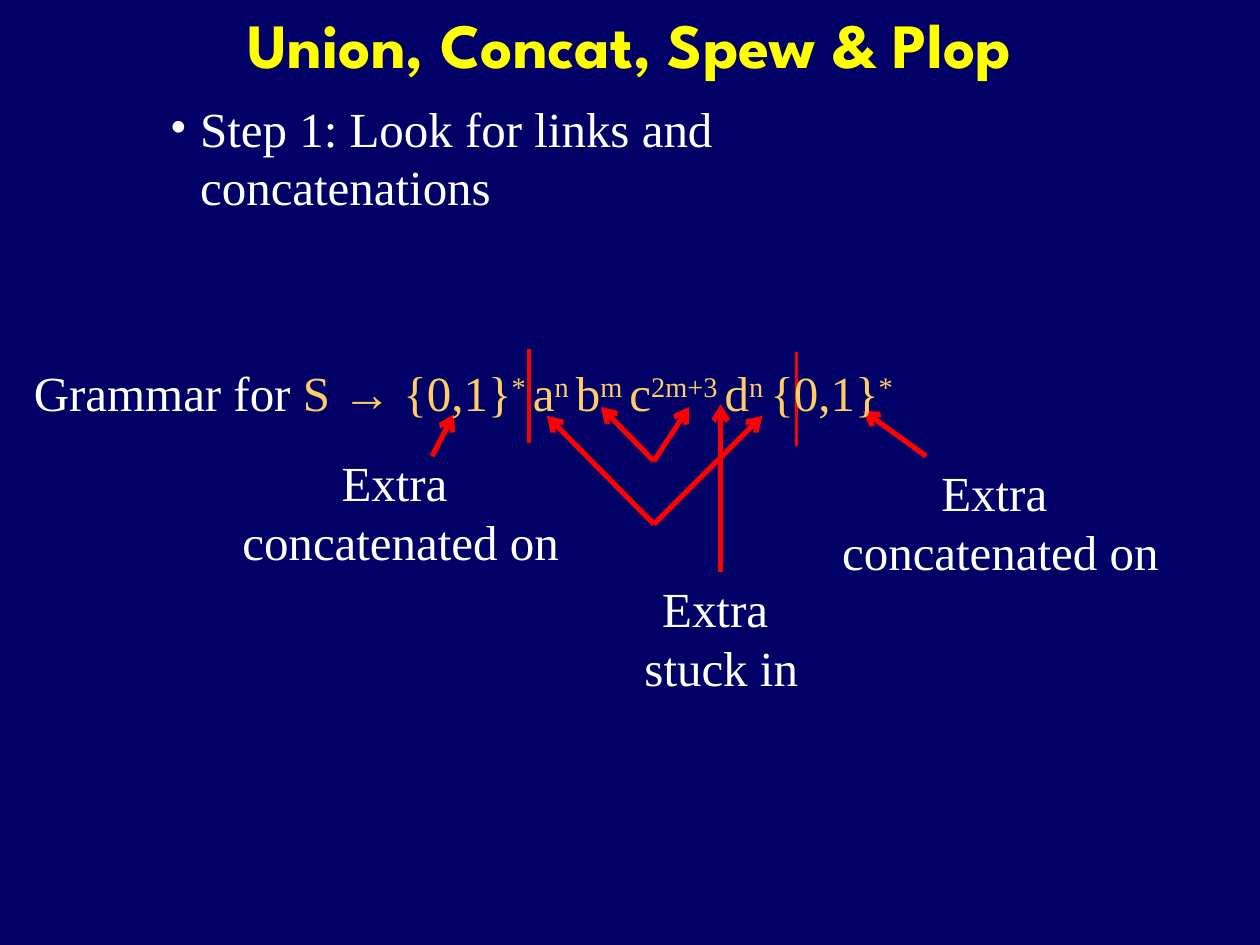
"""Build the slide on finding links and concatenations in a grammar."""
import pptx
import pptx.dml.color
import pptx.enum.shapes
import pptx.enum.text
import pptx.oxml.ns
import pptx.util
import lxml.etree

Inches, Pt = pptx.util.Inches, pptx.util.Pt
ALIGN, ANCHOR = pptx.enum.text.PP_ALIGN, pptx.enum.text.MSO_ANCHOR

THEME = {
    "background": "000066", "title": "FFFF00", "text": "FFFFFF",
    "grammar": "FFCC66", "mark": "FF0000",
    "title_font": "League Spartan", "body_font": "Times New Roman",
    "title_size": 36, "body_size": 28, "arrow_width": 3, "divider_width": 2,
}

TITLE = "Union, Concat, Spew & Plop"
STEP = "Step 1: Look for links and concatenations"
GRAMMAR_INTRO = "Grammar for "
GRAMMAR = [("S → {0,1}", "* "), ("a", "n "), ("b", "m "), ("c", "2m+3 "),
           ("d", "n "), ("{0,1}", "*")]
NOTES = [
    (("Extra ", "stuck in"), (5.01, 4.54, 1.43, 1.04)),
    (("Extra ", "concatenated on"), (1.81, 3.54, 2.74, 1.04)),
    (("Extra ", "concatenated on"), (6.57, 3.62, 2.74, 1.04)),
]
NOTE_ARROWS = [((5.72, 4.54), (5.72, 3.21)), ((3.43, 3.62), (3.6, 3.29)),
               ((7.35, 3.62), (6.85, 3.26))]
LINKS = [((5.19, 4.16), [(4.34, 3.3), (6.05, 3.3)]),
         ((5.19, 3.66), [(4.77, 3.23), (5.47, 3.23)])]
DIVIDERS = [(4.2, 2.77), (6.32, 2.79)]
DIVIDER_HEIGHT = 0.75


def rgb(name):
    return pptx.dml.color.RGBColor.from_string(THEME[name])


def add_child(parent, tag, **attrs):
    return lxml.etree.SubElement(parent, pptx.oxml.ns.qn(tag), attrs)


def add_box(s, box, wrap=True):
    tf = s.shapes.add_textbox(*map(Inches, box)).text_frame
    tf.word_wrap = wrap
    return tf


def add_run(p, text, color="text", kind="body", raised=False):
    r = p.add_run()
    r.text = text
    r.font.name = THEME[kind + "_font"]
    r.font.size = Pt(THEME[kind + "_size"])
    r.font.bold = kind == "title"
    r.font.color.rgb = rgb(color)
    if raised:
        r.font._element.set("baseline", "30000")


def add_line(s, start, end, width, arrow=False):
    straight = pptx.enum.shapes.MSO_CONNECTOR.STRAIGHT
    sp = s.shapes.add_connector(straight, *map(Inches, start + end))
    sp.line.color.rgb = rgb("mark")
    sp.line.width = Pt(THEME[width])
    if arrow:
        add_child(sp.line._get_or_add_ln(), "a:tailEnd", type="arrow")
    add_child(sp._element.spPr, "a:effectLst")


def add_title(s):
    tf = add_box(s, (0.75, -0.28, 8.5, 1.25))
    tf.vertical_anchor = ANCHOR.MIDDLE
    p = tf.paragraphs[0]
    p.alignment = ALIGN.CENTER
    add_run(p, TITLE, "title", "title")


def add_step(s):
    tf = add_box(s, (1.25, 0.73, 6.88, 0.57))
    tf.margin_right = Inches(0.2)
    p = tf.paragraphs[0]
    pPr = p._p.get_or_add_pPr()
    indent = Inches(0.24)
    pPr.set("marL", str(indent))
    pPr.set("indent", str(-indent))
    color = add_child(pPr, "a:buClr")
    add_child(color, "a:srgbClr", val=THEME["text"])
    add_child(pPr, "a:buFont", typeface=THEME["body_font"])
    add_child(pPr, "a:buChar", char="•")
    add_run(p, STEP)


def add_grammar(s):
    p = add_box(s, (0.17, 2.83, 9.42, 0.57)).paragraphs[0]
    add_run(p, GRAMMAR_INTRO)
    for base, exponent in GRAMMAR:
        add_run(p, base, "grammar")
        add_run(p, exponent, "grammar", raised=True)


def add_note(s, lines, box):
    tf = add_box(s, box, wrap=False)
    for i, line in enumerate(lines):
        p = tf.add_paragraph() if i else tf.paragraphs[0]
        p.alignment = ALIGN.CENTER
        add_run(p, line)


def main():
    prs = pptx.Presentation()
    prs.slide_width, prs.slide_height = Inches(10), Inches(7.5)
    s = prs.slides.add_slide(prs.slide_layouts[6])
    s.background.fill.solid()
    s.background.fill.fore_color.rgb = rgb("background")

    add_title(s)
    for lines, box in NOTES:
        add_note(s, lines, box)
    for start, end in NOTE_ARROWS:
        add_line(s, start, end, "arrow_width", arrow=True)
    for x, y in DIVIDERS:
        add_line(s, (x, y), (x, y + DIVIDER_HEIGHT), "divider_width")
    add_step(s)
    for corner, ends in LINKS:
        for end in ends:
            add_line(s, corner, end, "arrow_width", arrow=True)
    add_grammar(s)
    prs.save("out.pptx")


if __name__ == "__main__":
    main()
